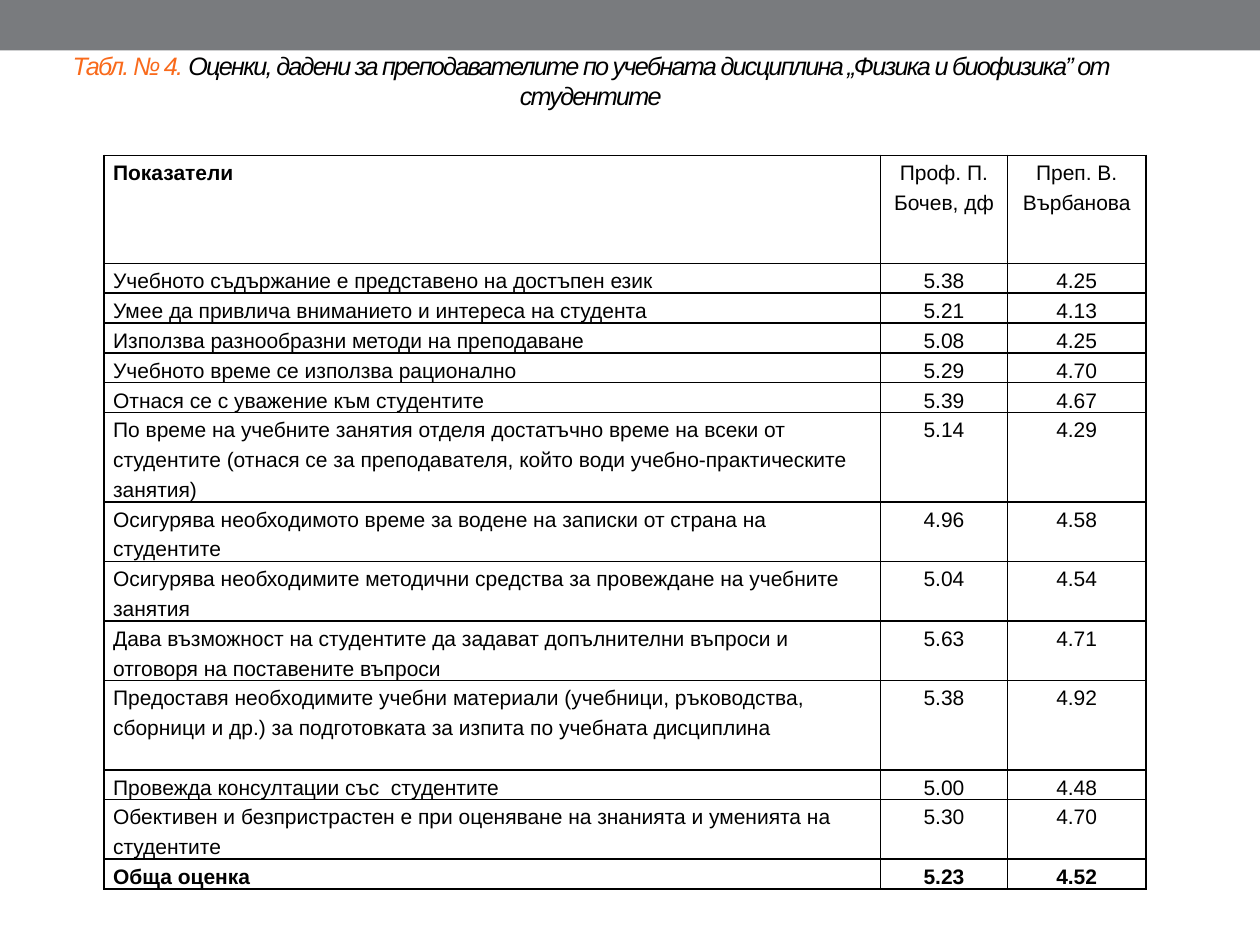
import lxml.etree
import pptx
import pptx.dml.color
import pptx.enum.shapes
import pptx.enum.text
import pptx.oxml.ns
import pptx.util

Cm, Pt = pptx.util.Cm, pptx.util.Pt
ALIGN = pptx.enum.text.PP_ALIGN
ANCHOR = pptx.enum.text.MSO_ANCHOR
qn = pptx.oxml.ns.qn

COLORS = {"band": "797B7E", "accent": "F96A1B", "text": "000000", "border": "000000"}
TITLE_FONT = {"name": "Arial", "size": Pt(14.4), "italic": True, "bold": False}
CELL_FONT = {"name": "Arial", "size": Pt(12)}
CELL_MARGINS = {"margin_left": Cm(0.18), "margin_right": Cm(0.18),
                "margin_top": 0, "margin_bottom": 0}
LINE_SPACING = Pt(17)
LINE_HEIGHT = 0.6
HEADER_HEIGHT = 2.18
COLUMN_WIDTHS = (15.65, 2.56, 2.79)

TITLE = [
    ("Табл. № 4. ", "accent"),
    ("Оценки, дадени за преподавателите по учебната дисциплина "
     "„Физика и биофизика” от студентите", "text"),
]
HEADER = ("Показатели", "Проф. П. Бочев, дф", "Преп. В. Върбанова")
# Each row: height in text lines, indicator, two scores
RATINGS = [
    (1, "Учебното съдържание е представено на достъпен език", "5.38", "4.25"),
    (1, "Умее да привлича вниманието и интереса на студента", "5.21", "4.13"),
    (1, "Използва разнообразни методи на преподаване", "5.08", "4.25"),
    (1, "Учебното време се използва рационално", "5.29", "4.70"),
    (1, "Отнася се с уважение към студентите", "5.39", "4.67"),
    (3, "По време на учебните занятия отделя достатъчно време на всеки от студентите "
        "(отнася се за преподавателя, който води учебно-практическите занятия)",
     "5.14", "4.29"),
    (2, "Осигурява необходимото време за водене на записки от страна на студентите",
     "4.96", "4.58"),
    (2, "Осигурява необходимите методични средства за провеждане на учебните занятия",
     "5.04", "4.54"),
    (2, "Дава възможност на студентите да задават допълнителни въпроси и "
        "отговоря на поставените въпроси", "5.63", "4.71"),
    (3, "Предоставя необходимите учебни материали (учебници, ръководства, сборници и др.) "
        "за подготовката за изпита по учебната дисциплина", "5.38", "4.92"),
    (1, "Провежда консултации със  студентите", "5.00", "4.48"),
    (2, "Обективен и безпристрастен е при оценяване на знанията и уменията на студентите",
     "5.30", "4.70"),
    (1, "Обща оценка", "5.23", "4.52"),
]


def apply(target, values):
    for name, value in values.items():
        setattr(target, name, value)


def rgb(color):
    return pptx.dml.color.RGBColor.from_string(COLORS[color])


class RatingPage:
    """Holds the current slide and adds styled elements to it."""

    def __init__(self, deck):
        self.page = deck.slides.add_slide(deck.slide_layouts[5])

    def span(self, para, text, color, font):
        span = para.add_run()
        span.text = text
        apply(span.font, font)
        span.font.color.rgb = rgb(color)
        return span

    def band(self, left, top, width, height):
        box = self.page.shapes.add_shape(
            pptx.enum.shapes.MSO_SHAPE.RECTANGLE, left, top, width, height)
        box.shadow.inherit = False
        box.fill.solid()
        box.fill.fore_color.rgb = rgb("band")
        box.line.fill.background()

    def title(self, spans, left, top, width, height):
        box = self.page.shapes.title
        apply(box, {"left": left, "top": top, "width": width, "height": height})
        apply(box.text_frame, {"word_wrap": True, "vertical_anchor": ANCHOR.MIDDLE,
                               "auto_size": pptx.enum.text.MSO_AUTO_SIZE.NONE})
        para = box.text_frame.paragraphs[0]
        para.alignment = ALIGN.CENTER
        for text, color in spans:
            span = self.span(para, text, color, TITLE_FONT)
            span.font._element.set("spc", "-100")

    def borders(self, cell):
        properties = cell._tc.get_or_add_tcPr()
        for side in ("a:lnL", "a:lnR", "a:lnT", "a:lnB"):
            line = lxml.etree.SubElement(properties, qn(side), w=str(Pt(1)))
            fill = lxml.etree.SubElement(line, qn("a:solidFill"))
            lxml.etree.SubElement(fill, qn("a:srgbClr"), val=COLORS["border"])

    def cell(self, cell, text, alignment, bold):
        apply(cell, CELL_MARGINS)
        self.borders(cell)
        cell.fill.background()
        para = cell.text_frame.paragraphs[0]
        apply(para, {"alignment": alignment, "line_spacing": LINE_SPACING})
        self.span(para, text, "text", {**CELL_FONT, "bold": bold})

    def table(self, header, ratings, left, top):
        heights = [HEADER_HEIGHT] + [LINE_HEIGHT * lines for lines, *_ in ratings]
        rows = [header] + [texts for _, *texts in ratings]
        table = self.page.shapes.add_table(
            len(rows), len(header), left, top,
            Cm(sum(COLUMN_WIDTHS)), Cm(sum(heights))).table
        apply(table, {"first_row": False, "horz_banding": False})
        for column, width in zip(table.columns, COLUMN_WIDTHS):
            column.width = Cm(width)
        for r, (texts, height) in enumerate(zip(rows, heights)):
            table.rows[r].height = Cm(height)
            for c, text in enumerate(texts):
                bold = r == len(rows) - 1 or (r == 0 and c == 0)
                self.cell(table.cell(r, c), text, ALIGN.CENTER if c else ALIGN.LEFT, bold)


def main():
    deck = pptx.Presentation()
    apply(deck, {"slide_width": Cm(25.4), "slide_height": Cm(19.05)})
    page = RatingPage(deck)
    page.band(0, 0, deck.slide_width, Cm(1.02))
    page.title(TITLE, Cm(0.5), Cm(0.92), Cm(22.82), Cm(1.4))
    page.table(HEADER, RATINGS, Cm(2.1), Cm(3.13))
    deck.save("out.pptx")


if __name__ == "__main__":
    main()
